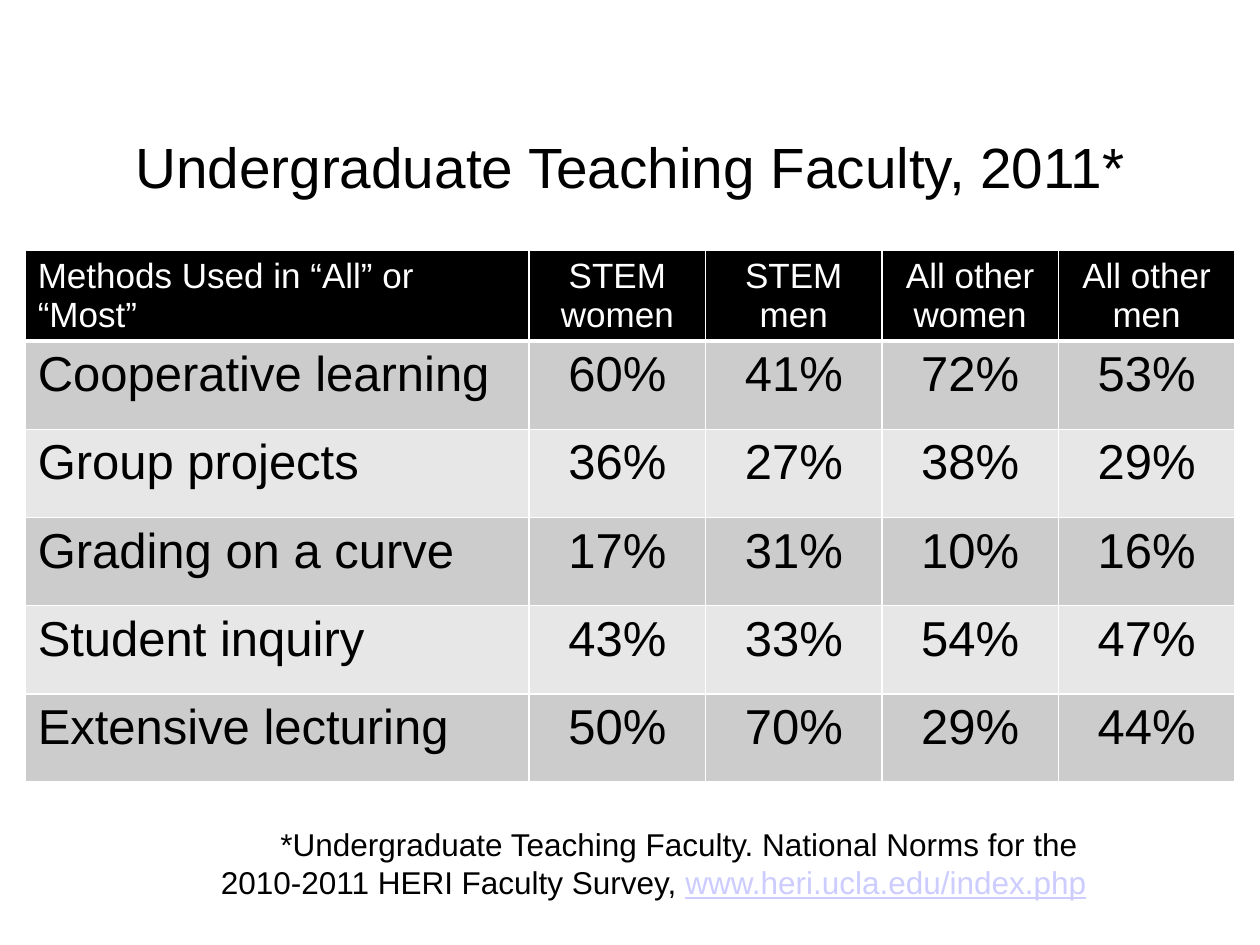
from lxml.etree import SubElement
from pptx import Presentation
from pptx.dml.color import RGBColor
from pptx.enum.text import MSO_ANCHOR, PP_ALIGN
from pptx.oxml.ns import qn
from pptx.util import Inches, Pt

WIDTH, HEIGHT = Inches(10), Inches(7.5)
METHODS_HEADING = "Methods Used in “All” or “Most”"
FACULTY_GROUPS = ["STEM women", "STEM\nmen", "All other women", "All other men"]
METHOD_SHARES = {
    "Cooperative learning": [60, 41, 72, 53],
    "Group projects": [36, 27, 38, 29],
    "Grading on a curve": [17, 31, 10, 16],
    "Student inquiry": [43, 33, 54, 47],
    "Extensive lecturing": [50, 70, 29, 44],
}


def color(hex_value):
    return RGBColor.from_string(hex_value)


def write(paragraph, text, size, fill="000000", font="Arial", align=None, underline=None):
    """Append text to the paragraph; a newline becomes a line break."""
    if align is not None:
        paragraph.alignment = align
    for number, line in enumerate(text.split("\n")):
        if number:
            paragraph.add_line_break()
        run = paragraph.add_run()
        run.text = line
        run.font.name = font
        run.font.size = Pt(size)
        run.font.bold = False
        run.font.underline = underline
        run.font.color.rgb = color(fill)


def border(cell, side, points, fill):
    """Draw one side (L, R, T or B) of a cell; call before the cell's fill is set."""
    edge = SubElement(cell._tc.get_or_add_tcPr(), qn(f"a:ln{side}"), w=str(Pt(points)))
    solid = SubElement(edge, qn("a:solidFill"))
    SubElement(solid, qn("a:srgbClr"), val=fill)


class SurveySlide:
    ink, paper, link = "000000", "FFFFFF", "CCCCFF"
    bands = ["CCCCCC", "E7E7E7"]

    def __init__(self, deck):
        self.slide = deck.slides.add_slide(deck.slide_layouts[5])

    def box(self, left, top, width, height):
        """Turn shares of the slide's size into lengths."""
        return (int(left * WIDTH), int(top * HEIGHT),
                int(width * WIDTH), int(height * HEIGHT))

    def title(self, text, *shares):
        heading = self.slide.shapes.title
        heading.left, heading.top, heading.width, heading.height = self.box(*shares)
        heading.text_frame.vertical_anchor = MSO_ANCHOR.MIDDLE
        write(heading.text_frame.paragraphs[0], text, 32.4, self.ink, align=PP_ALIGN.CENTER)

    def table(self, rows, column_widths, row_heights, *shares):
        table = self.slide.shapes.add_table(
            len(rows), len(column_widths), *self.box(*shares)).table
        for column, width in zip(table.columns, column_widths):
            column.width = Inches(width)
        for row, height in zip(table.rows, row_heights):
            row.height = Inches(height)
        for r, texts in enumerate(rows):
            for c, text in enumerate(texts):
                self.cell(table.cell(r, c), text, r, c)

    def cell(self, cell, text, row, column):
        header = row == 0
        for side in "LRTB":
            border(cell, side, 3 if header and side == "B" else 1, self.paper)
        cell.fill.solid()
        cell.fill.fore_color.rgb = color(self.ink if header else self.bands[(row - 1) % 2])
        if header and column == 0:
            cell.vertical_anchor = MSO_ANCHOR.MIDDLE
        write(cell.text_frame.paragraphs[0], text, 20 if header else 28,
              self.paper if header else self.ink,
              align=PP_ALIGN.CENTER if column else PP_ALIGN.LEFT)

    def footnote(self, text, address, *shares):
        frame = self.slide.shapes.add_textbox(*self.box(*shares)).text_frame
        frame.word_wrap = True
        citation = frame.paragraphs[0]
        write(citation, text, 18, self.ink, align=PP_ALIGN.RIGHT)
        write(citation, address, 18, self.link, underline=True)


def main():
    deck = Presentation()
    deck.slide_width, deck.slide_height = WIDTH, HEIGHT
    survey = SurveySlide(deck)
    survey.title("Undergraduate Teaching Faculty, 2011*", 0.05, 0.09, 0.9, 0.17)
    rows = [[METHODS_HEADING, *FACULTY_GROUPS]]
    rows += [[method, *(f"{share}%" for share in shares)]
             for method, shares in METHOD_SHARES.items()]
    survey.table(rows, [4] + [1.4] * len(FACULTY_GROUPS),
                 [0.71] + [0.7] * len(METHOD_SHARES), 0.02, 0.265, 0.96, 0.56)
    survey.footnote("*Undergraduate Teaching Faculty. National Norms for the \n"
                    "2010-2011 HERI Faculty Survey, ", "www.heri.ucla.edu/index.php",
                    0.1, 0.867, 0.772, 0.095)
    deck.save("out.pptx")


if __name__ == "__main__":
    main()
